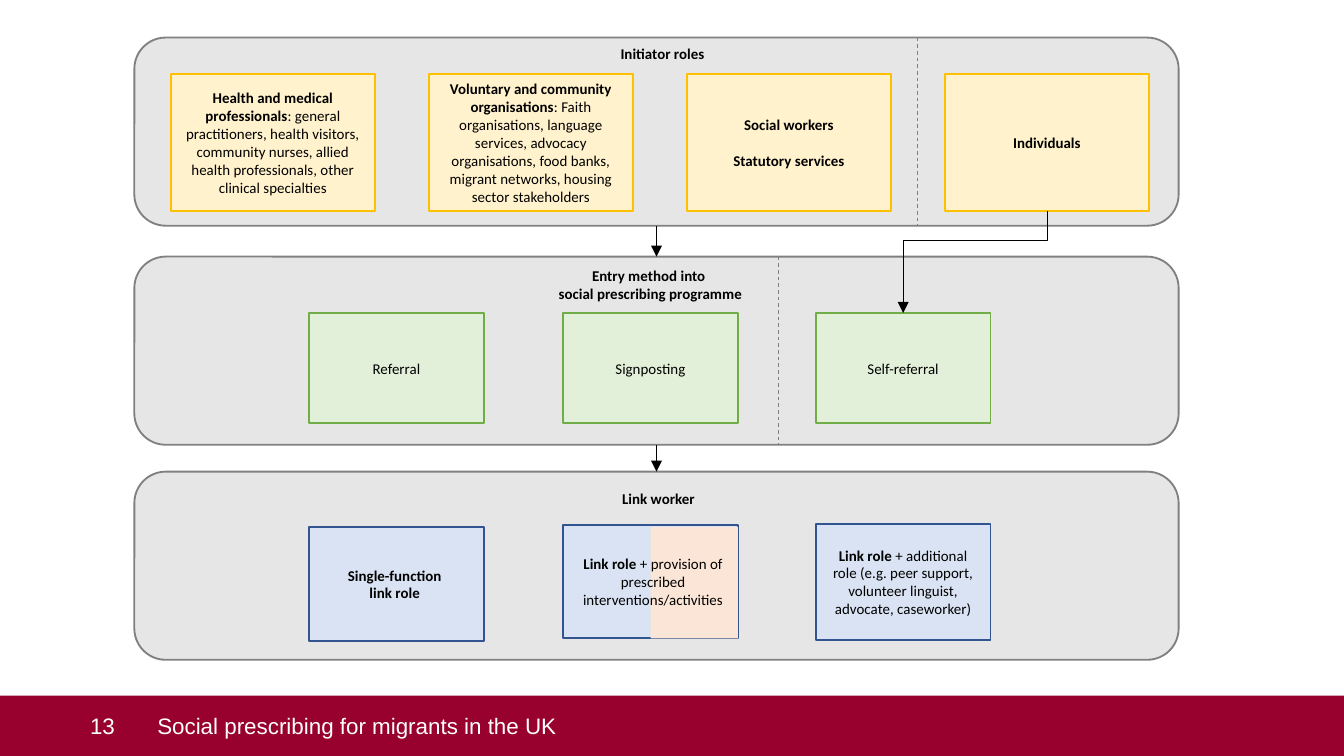
from dataclasses import dataclass

from lxml import etree
from pptx import Presentation
from pptx.dml.color import RGBColor
from pptx.enum.dml import MSO_LINE
from pptx.enum.shapes import MSO_CONNECTOR as Connector, MSO_SHAPE as Shape
from pptx.enum.text import MSO_ANCHOR, MSO_AUTO_SIZE, PP_ALIGN
from pptx.oxml.ns import qn
from pptx.util import Inches, Pt


@dataclass(frozen=True)
class Theme:
    footer: str = "98002E"
    white: str = "FFFFFF"
    black: str = "000000"
    grey: str = "808080"
    band: str = "E7E6E6"
    peach: str = "FBE5D6"
    yellow: tuple = ("FFF2CC", "FFC000")
    green: tuple = ("E2F0D9", "70AD47")
    blue: tuple = ("DAE3F3", "325491")
    body_font: str = "Calibri"
    footer_font: str = "Arial"
    body_size: float = 8
    footer_size: float = 12
    blank_line: float = 9.8
    outline: float = 1
    thin: float = 0.5


THEME = Theme()

# Each box text is a list of paragraphs; each paragraph is (bold part, plain part).
PAGE_NUMBER = "13"
TITLE = "Social prescribing for migrants in the UK"
HEADINGS = [  # text, left, top, width
    ([("Initiator roles", "")], 4.38, 0.14, 1.1),
    ([("Entry method into ", ""), ("social prescribing programme", "")], 3.38, 1.86, 2.92),
    ([("Link worker", "")], 4.33, 3.45, 1.14),
]
INITIATORS = [
    [("Health and medical professionals", ": general practitioners, health visitors, "
      "community nurses, allied health professionals, other clinical specialties")],
    [("Voluntary and community organisations", ": Faith organisations, language services, "
      "advocacy organisations, food banks, migrant networks, housing sector stakeholders")],
    [("Social workers", ""), ("Statutory services", "")],
    [("Individuals", "")],
]
ENTRY_METHODS = ["Referral", "Signposting", "Self-referral"]
LINK_WORKERS = [  # text, top, height
    ([("Single-function ", ""), ("link role ", "")], 3.92, 0.85),
    ([("Link role ", "+ provision of prescribed interventions/activities")], 3.91, 0.84),
    ([("Link role ", "+ additional role (e.g. peer support, volunteer linguist, "
       "advocate, caseworker)")], 3.9, 0.86),
]

SLIDE_WIDTH = 10
SLIDE_HEIGHT = SLIDE_WIDTH * 9 / 16
BAND_LEFT, BAND_WIDTH, BAND_HEIGHT = 1.0, 7.77, 1.4
BAND_TOPS = [0.28, 1.91, 3.51]
FOOTER_HEIGHT = 0.45
FOOTER_TOP = SLIDE_HEIGHT - FOOTER_HEIGHT
INITIATOR_LEFT, INITIATOR_PITCH = 1.27, 1.92
COLUMNS, COLUMN_WIDTH = [2.3, 4.19, 6.07], 1.3


def rgb(value):
    return RGBColor.from_string(value)


def add_run(paragraph, text, font, size, color, bold=False):
    run = paragraph.add_run()
    run.text = text
    run.font.name, run.font.size, run.font.bold = font, Pt(size), bold
    run.font.color.rgb = rgb(color)


def write(shape, paragraphs, gap=0):
    """Centre the paragraphs in a shape, with a gap in points between them."""
    frame = shape.text_frame
    frame.word_wrap = True
    frame.vertical_anchor = MSO_ANCHOR.MIDDLE
    for index, parts in enumerate(paragraphs):
        paragraph = frame.add_paragraph() if index else frame.paragraphs[0]
        paragraph.alignment = PP_ALIGN.CENTER
        if index and gap:
            paragraph.space_before = Pt(gap)
        for text, bold in zip(parts, (True, False)):
            if text:
                add_run(paragraph, text, THEME.body_font, THEME.body_size, THEME.black, bold)


def add_box(shapes, box, fill, line=None, kind=Shape.RECTANGLE):
    shape = shapes.add_shape(kind, *map(Inches, box))
    shape.shadow.inherit = False
    shape.fill.solid()
    shape.fill.fore_color.rgb = rgb(fill)
    if line:
        shape.line.color.rgb = rgb(line)
        shape.line.width = Pt(THEME.outline)
    else:
        shape.line.fill.background()
    return shape


def add_label(shapes, box, paragraphs):
    write(shapes.add_textbox(*map(Inches, box)), paragraphs)


def add_line(shapes, color, ends=(0, 0, 0, 0), kind=Connector.STRAIGHT):
    line = shapes.add_connector(kind, *map(Inches, ends))
    line.line.color.rgb = rgb(color)
    line.line.width = Pt(THEME.thin)
    etree.SubElement(line._element.spPr, qn("a:effectLst"))
    return line


def add_divider(shapes, x, top):
    divider = add_line(shapes, THEME.grey, (x, top, x, top + BAND_HEIGHT))
    divider.line.dash_style = MSO_LINE.DASH


def add_arrow(shapes, source, target, kind=Connector.STRAIGHT):
    """Join the bottom of source to the top of target."""
    arrow = add_line(shapes, THEME.black, kind=kind)
    arrow.begin_connect(source, 2)
    arrow.end_connect(target, 0)
    etree.SubElement(arrow.line._get_or_add_ln(), qn("a:tailEnd"), type="triangle")
    return arrow


def turn_elbow(arrow, source, target, bend):
    """Make an elbow leave downwards, turning at the given share of its drop."""
    start_x, end_x = (shape.left + shape.width // 2 for shape in (source, target))
    start_y, end_y = source.top + source.height, target.top
    arrow.width, arrow.height = end_y - start_y, start_x - end_x
    arrow.left = (start_x + end_x - arrow.width) // 2
    arrow.top = (start_y + end_y - arrow.height) // 2
    transform = arrow._element.spPr.find(qn("a:xfrm"))
    for flip in ("flipH", "flipV"):
        transform.attrib.pop(flip, None)
    transform.set("rot", str(90 * 60000))
    geometry = arrow._element.spPr.find(qn("a:prstGeom"))
    guides = geometry.find(qn("a:avLst"))
    if guides is None:
        guides = etree.SubElement(geometry, qn("a:avLst"))
    etree.SubElement(guides, qn("a:gd"), name="adj1", fmla=f"val {round(bend * 100000)}")


def format_footer_text(shape, text, margin_left):
    frame = shape.text_frame
    frame.auto_size = MSO_AUTO_SIZE.NONE
    frame.word_wrap = True
    frame.vertical_anchor = MSO_ANCHOR.MIDDLE
    frame.margin_left = Inches(margin_left)
    frame.margin_top = frame.margin_right = frame.margin_bottom = 0
    paragraph = frame.paragraphs[0]
    paragraph.alignment = PP_ALIGN.LEFT
    add_run(paragraph, text, THEME.footer_font, THEME.footer_size, THEME.white)


def add_footer(slide):
    bar = add_box(slide.shapes, (0, FOOTER_TOP, SLIDE_WIDTH, FOOTER_HEIGHT), THEME.footer)
    format_footer_text(bar, PAGE_NUMBER, 0.67)
    title = slide.shapes.title
    title.left, title.top = Inches(0.98), Inches(FOOTER_TOP)
    title.width, title.height = Inches(8.82), Inches(FOOTER_HEIGHT)
    format_footer_text(title, TITLE, 0.19)
    bar._element.addnext(title._element)


def main():
    presentation = Presentation()
    presentation.slide_width = Inches(SLIDE_WIDTH)
    presentation.slide_height = Inches(SLIDE_HEIGHT)
    slide = presentation.slides.add_slide(presentation.slide_layouts[5])
    shapes = slide.shapes
    add_footer(slide)

    bands = [add_box(shapes, (BAND_LEFT, top, BAND_WIDTH, BAND_HEIGHT), THEME.band,
                     THEME.grey, Shape.ROUNDED_RECTANGLE) for top in BAND_TOPS]
    for text, left, top, width in HEADINGS:
        add_label(shapes, (left, top, width, 0.52), text)

    for index, text in enumerate(INITIATORS):
        left = INITIATOR_LEFT + index * INITIATOR_PITCH
        initiator = add_box(shapes, (left, 0.55, 1.52, 1.02), *THEME.yellow)
        write(initiator, text, gap=THEME.blank_line)

    for left, text in zip(COLUMNS, ENTRY_METHODS):
        entry = add_box(shapes, (left, 2.33, COLUMN_WIDTH, 0.82), *THEME.green)
        write(entry, [("", text)])

    workers = [add_box(shapes, (left, top, COLUMN_WIDTH, height), *THEME.blue)
               for left, (_, top, height) in zip(COLUMNS, LINK_WORKERS)]
    add_box(shapes, (4.84, 3.92, COLUMN_WIDTH / 2, 0.83), THEME.peach)
    for index, (text, top, height) in enumerate(LINK_WORKERS):
        if index == 1:  # the half fill lies over this box, so its text goes on top
            add_label(shapes, (COLUMNS[index] + 0.02, top, COLUMN_WIDTH, height), text)
        else:
            write(workers[index], text)

    for upper, lower in zip(bands, bands[1:]):
        add_arrow(shapes, upper, lower)
    for x, top in zip((6.83, 5.79), BAND_TOPS):
        add_divider(shapes, x, top)
    elbow = add_arrow(shapes, initiator, entry, Connector.ELBOW)
    turn_elbow(elbow, initiator, entry, 0.29)

    presentation.save("out.pptx")


if __name__ == "__main__":
    main()
